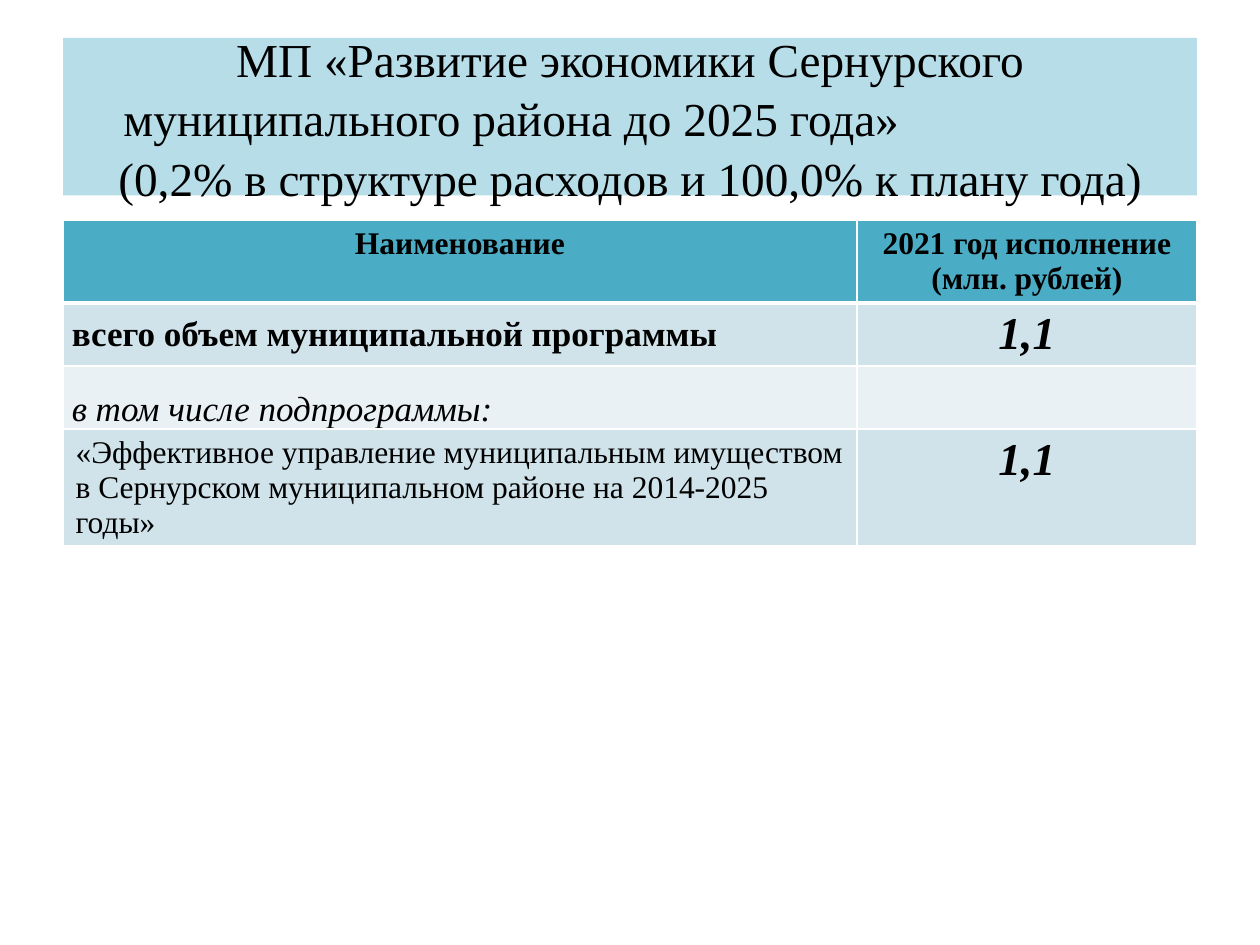
import pptx
import pptx.util
import pptx.dml.color
import pptx.enum.text
import pptx.oxml
import pptx.oxml.ns
from dataclasses import dataclass

Inches = pptx.util.Inches
Align = pptx.enum.text.PP_ALIGN
Anchor = pptx.enum.text.MSO_ANCHOR


@dataclass(frozen=True)
class Theme:
    font: str = "Times New Roman"
    ink: str = "000000"
    banner: str = "B7DEE8"
    header: str = "4BACC6"
    band_dark: str = "D0E3EA"
    band_light: str = "E9F1F5"
    rule: str = "FFFFFF"
    title_size: int = 27
    body_size: int = 18
    lead_size: int = 20
    value_size: int = 26


THEME = Theme()


def color(code):
    return pptx.dml.color.RGBColor.from_string(code)


def apply(target, values):
    for name, value in values.items():
        setattr(target, name, value)


def paint(target, code):
    target.fill.solid()
    target.fill.fore_color.rgb = color(code)


def write(para, text, size, **style):
    span = para.add_run()
    span.text = text
    apply(span.font, {"name": THEME.font, "size": pptx.util.Pt(size), **style})
    span.font.color.rgb = color(THEME.ink)


def add_borders(cell, bottom):
    properties = cell._tc.get_or_add_tcPr()
    widths = {"lnL": 1, "lnR": 1, "lnT": 1, "lnB": bottom}
    for position, (side, width) in enumerate(widths.items()):
        line = pptx.oxml.parse_xml(
            f'<a:{side} {pptx.oxml.ns.nsdecls("a")} w="{pptx.util.Pt(width)}">'
            f'<a:solidFill><a:srgbClr val="{THEME.rule}"/></a:solidFill></a:{side}>'
        )
        properties.insert(position, line)


def place_title(page, box):
    title = page.shapes.title
    apply(title, dict(zip(("left", "top", "width", "height"), box)))
    paint(title, THEME.banner)
    frame = title.text_frame
    apply(frame, {"word_wrap": True, "vertical_anchor": Anchor.MIDDLE,
                  "auto_size": pptx.enum.text.MSO_AUTO_SIZE.NONE})
    lines = [
        ("МП «Развитие экономики Сернурского", Align.CENTER, 0),
        ("муниципального района до 2025 года»", Align.LEFT, 0.38),
        ("(0,2% в структуре расходов и 100,0% к плану года)", Align.CENTER, 0),
    ]
    for index, (text, alignment, indent) in enumerate(lines):
        para = frame.add_paragraph() if index else frame.paragraphs[0]
        apply(para, {"alignment": alignment, "line_spacing": 1.05})
        para._p.get_or_add_pPr().set("marL", str(Inches(indent)))
        write(para, text, THEME.title_size)


def place_table(page, box):
    heading = {"size": THEME.body_size, "bold": True}
    value = {"size": THEME.value_size, "bold": True, "italic": True}
    tight = {"margin_left": Inches(0.07), "margin_right": Inches(0.07),
             "margin_top": 0, "margin_bottom": 0}
    middle = {"vertical_anchor": Anchor.MIDDLE, **tight}
    low = {"vertical_anchor": Anchor.BOTTOM, **tight}
    center, left = Align.CENTER, Align.LEFT
    rows = [
        (0.65, THEME.header, [
            ("Наименование", center, heading, {}),
            ("2021 год исполнение (млн. рублей)", center, heading, {})]),
        (0.49, THEME.band_dark, [
            ("всего объем муниципальной программы", left,
             {"size": THEME.lead_size, "bold": True}, middle),
            ("1,1", center, value, {})]),
        (0.5, THEME.band_light, [
            ("в том числе подпрограммы:", left,
             {"size": THEME.lead_size, "bold": False, "italic": True}, low),
            ("", left, {}, {})]),
        (0.93, THEME.band_dark, [
            ("«Эффективное управление муниципальным имуществом в Сернурском "
             "муниципальном районе на 2014-2025 годы»", left,
             {"size": THEME.body_size, "bold": False}, {}),
            ("1,1", center, value, {})]),
    ]
    table = page.shapes.add_table(len(rows), 2, *box).table
    for column, share in zip(table.columns, (0.7, 0.3)):
        column.width = int(box[2] * share)
    for row_index, (height, fill, cells) in enumerate(rows):
        table.rows[row_index].height = Inches(height)
        for column_index, (text, alignment, style, layout) in enumerate(cells):
            cell = table.cell(row_index, column_index)
            paint(cell, fill)
            apply(cell, layout)
            add_borders(cell, 1 if row_index else 3)
            para = cell.text_frame.paragraphs[0]
            para.alignment = alignment
            if text:
                write(para, text, **style)


def main():
    deck = pptx.Presentation()
    apply(deck, {"slide_width": Inches(10), "slide_height": Inches(7.5)})
    page = deck.slides.add_slide(deck.slide_layouts.get_by_name("Title Only"))
    left, width = Inches(0.5), Inches(9)
    place_title(page, (left, Inches(0.3), width, Inches(1.25)))
    place_table(page, (left, Inches(1.75), width, Inches(2.57)))
    deck.save("out.pptx")


if __name__ == "__main__":
    main()
